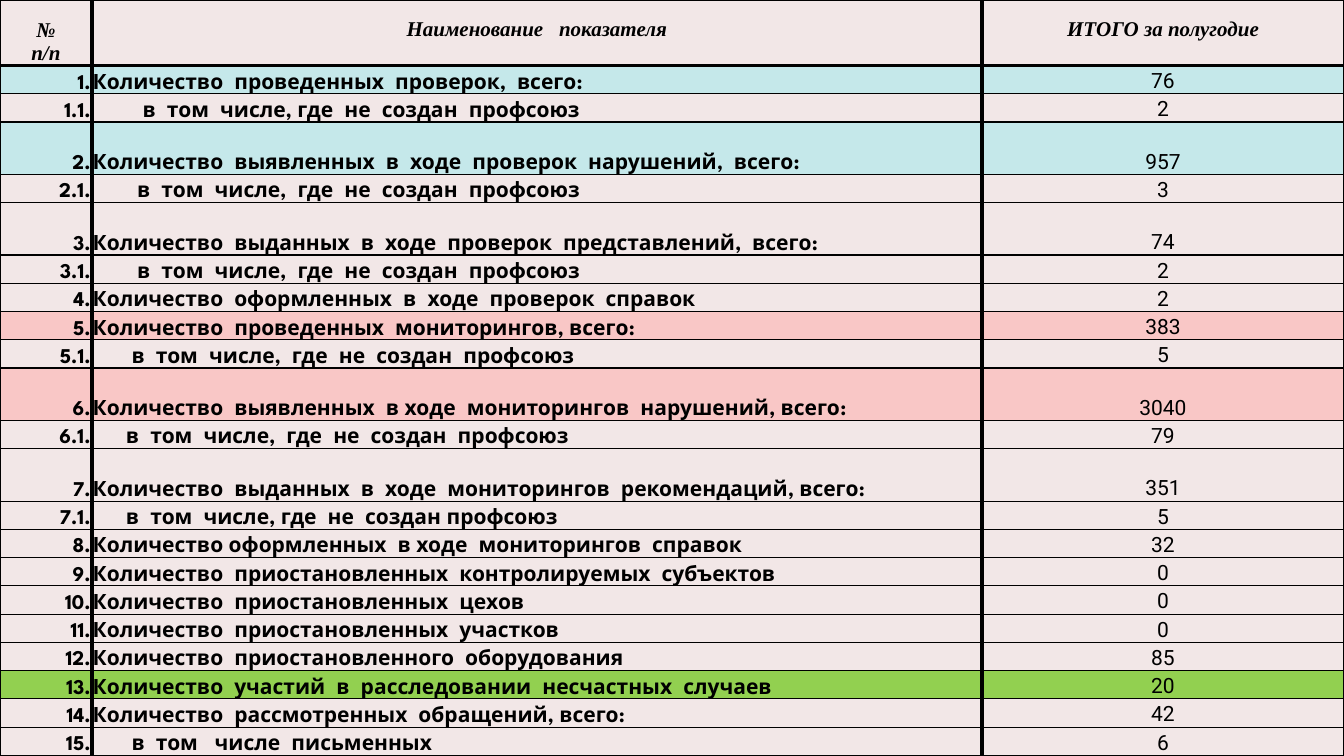
import pptx
import pptx.util
import pptx.dml.color
import pptx.enum.text
import pptx.oxml
import pptx.oxml.ns

RGB = pptx.dml.color.RGBColor
Inches = pptx.util.Inches
ALIGN = pptx.enum.text.PP_ALIGN

BLACK = RGB(0x00, 0x00, 0x00)
PALE = RGB(0xF2, 0xE7, 0xE7)
BLUE = RGB(0xC5, 0xE8, 0xEA)
PINK = RGB(0xF9, 0xC7, 0xC6)
GREEN = RGB(0x92, 0xD0, 0x50)

HEADS = ["№\nп/п", "Наименование   показателя", "ИТОГО за полугодие"]
# number, label, total, indent steps of the label
ROWS = [
    ("1.", "Количество  проведенных  проверок,  всего:", 76, 0),
    ("1.1.", "в  том  числе, где  не  создан  профсоюз", 2, 9),
    ("2.", "Количество  выявленных  в  ходе  проверок  нарушений,  всего:", 957, 0),
    ("2.1.", "в  том  числе,  где  не  создан  профсоюз", 3, 8),
    ("3.", "Количество  выданных  в  ходе  проверок  представлений,  всего:", 74, 0),
    ("3.1.", "в  том  числе,  где  не  создан  профсоюз", 2, 8),
    ("4.", "Количество  оформленных  в  ходе  проверок  справок", 2, 0),
    ("5.", "Количество  проведенных  мониторингов, всего:", 383, 0),
    ("5.1.", "в  том  числе,  где  не  создан  профсоюз", 5, 7),
    ("6.", "Количество  выявленных  в ходе  мониторингов  нарушений, всего:", 3040, 0),
    ("6.1.", "в  том  числе,  где  не  создан  профсоюз", 79, 6),
    ("7.", "Количество  выданных  в  ходе  мониторингов  рекомендаций, всего:", 351, 0),
    ("7.1.", "в  том  числе, где  не  создан профсоюз", 5, 6),
    ("8.", "Количество оформленных  в ходе  мониторингов  справок", 32, 0),
    ("9.", "Количество  приостановленных  контролируемых  субъектов", 0, 0),
    ("10.", "Количество  приостановленных  цехов", 0, 0),
    ("11.", "Количество  приостановленных  участков", 0, 0),
    ("12.", "Количество  приостановленного  оборудования", 85, 0),
    ("13.", "Количество  участий  в  расследовании  несчастных  случаев", 20, 0),
    ("14.", "Количество  рассмотренных  обращений, всего:", 42, 0),
    ("15.", "в  том   числе  письменных", 6, 7),
]
FILLS = {"1.": BLUE, "2.": BLUE, "5.": PINK, "6.": PINK, "13.": GREEN}
TALL = {"2.", "3.", "6.", "7."}

WIDE, HIGH = 13.33, 7.5
COLS = [0.91, 8.83, 3.59]
HEAD_H, TALL_H = 0.65, 0.52
ROW_H = (HIGH - HEAD_H - TALL_H * len(TALL)) / (len(ROWS) - len(TALL))
STEP = 0.055
PAD = 0.01
LINE_H = 0.24
THIN, THICK = 1, 3


def write(cell, text, font="League Spartan", bold=True, italic=False,
          align=ALIGN.CENTER, indent=0, fill=PALE, foot=0):
    cell.fill.solid()
    cell.fill.fore_color.rgb = fill
    cell.vertical_anchor = pptx.enum.text.MSO_ANCHOR.BOTTOM
    cell.margin_left = cell.margin_right = cell.margin_top = Inches(PAD)
    cell.margin_bottom = Inches(foot)
    cell.text = text
    for para in cell.text_frame.paragraphs:
        para.alignment = align
        if indent:
            para._p.get_or_add_pPr().set("marL", str(Inches(indent)))
        for run in para.runs:
            run.font.name = font
            run.font.size = pptx.util.Pt(15)
            run.font.bold = bold
            run.font.italic = italic
            run.font.color.rgb = BLACK


def border(cell, row, col):
    """Thick lines part the columns and the header; all others are thin."""
    widths = {
        "lnL": THICK if col > 0 else THIN,
        "lnR": THICK if col < len(COLS) - 1 else THIN,
        "lnT": THICK if row == 1 else THIN,
        "lnB": THICK if row == 0 else THIN,
    }
    props = cell._tc.get_or_add_tcPr()
    for spot, (side, width) in enumerate(widths.items()):
        props.insert(spot, pptx.oxml.parse_xml(
            f'<a:{side} {pptx.oxml.ns.nsdecls("a")} w="{pptx.util.Pt(width)}">'
            f'<a:solidFill><a:srgbClr val="{BLACK}"/></a:solidFill></a:{side}>'))


def main():
    deck = pptx.Presentation()
    deck.slide_width, deck.slide_height = Inches(WIDE), Inches(HIGH)
    slide = deck.slides.add_slide(deck.slide_layouts[6])
    table = slide.shapes.add_table(len(ROWS) + 1, len(COLS), 0, 0,
                                   Inches(WIDE), Inches(HIGH)).table
    table.first_row = table.horz_banding = False
    for col, width in enumerate(COLS):
        table.columns[col].width = Inches(width)

    table.rows[0].height = Inches(HEAD_H)
    for col, head in enumerate(HEADS):
        write(table.cell(0, col), head, font="Times New Roman", italic=True,
              foot=0 if "\n" in head else LINE_H)

    for row, (num, label, total, steps) in enumerate(ROWS, 1):
        table.rows[row].height = Inches(TALL_H if num in TALL else ROW_H)
        fill = FILLS.get(num, PALE)
        write(table.cell(row, 0), num, align=ALIGN.RIGHT, fill=fill)
        write(table.cell(row, 1), label, align=ALIGN.JUSTIFY,
              indent=steps * STEP, fill=fill)
        write(table.cell(row, 2), str(total), font="Roboto", bold=False, fill=fill)

    for row in range(len(ROWS) + 1):
        for col in range(len(COLS)):
            border(table.cell(row, col), row, col)
    deck.save("out.pptx")


if __name__ == "__main__":
    main()
